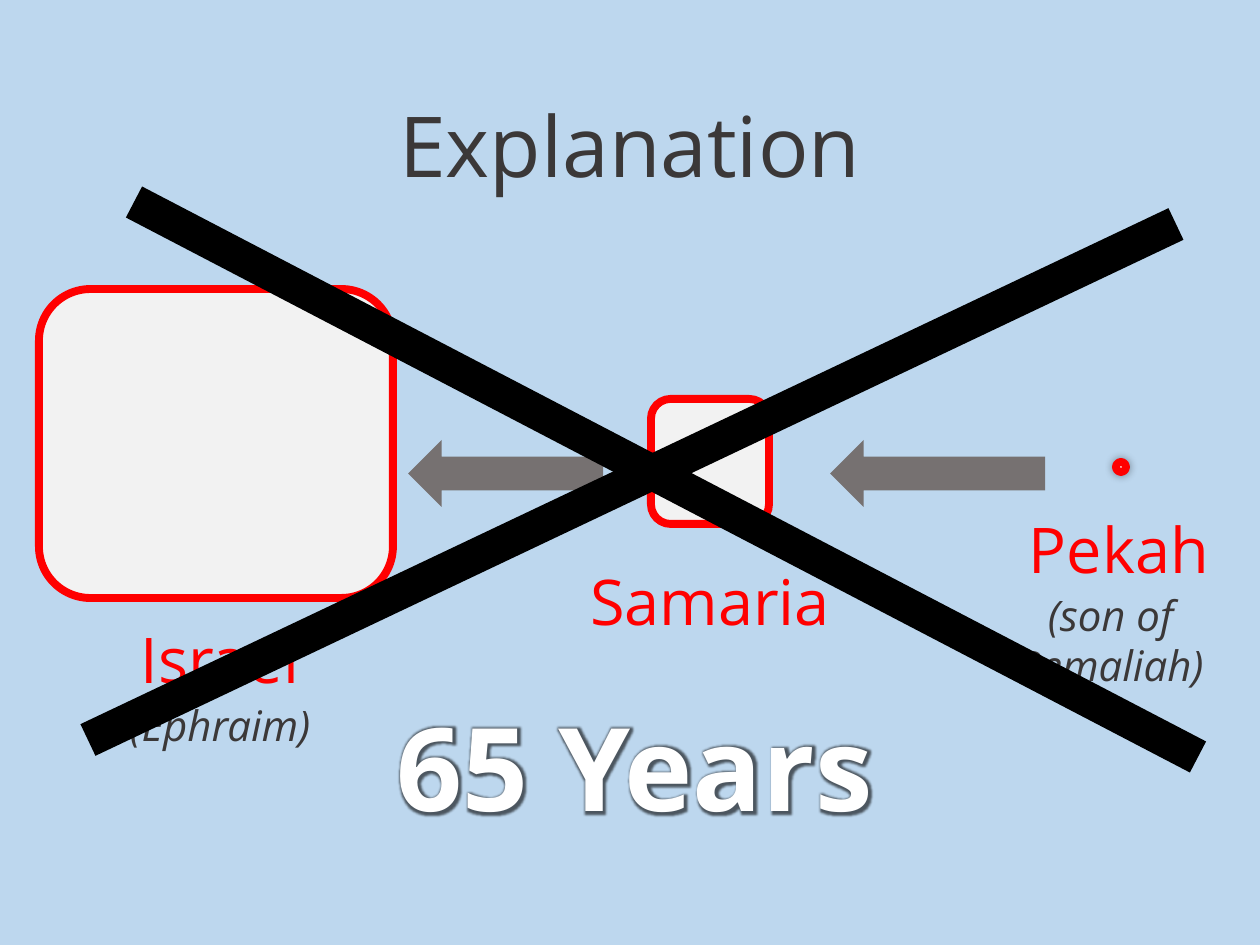
from dataclasses import dataclass
from typing import Optional

import lxml.etree
import pptx
import pptx.dml.color
import pptx.enum.shapes
import pptx.enum.text
import pptx.oxml
import pptx.oxml.ns
import pptx.util

RGB = pptx.dml.color.RGBColor
KIND = pptx.enum.shapes.MSO_SHAPE
SKY = RGB(0xBD, 0xD7, 0xEE)
DARK = RGB(0x3B, 0x38, 0x38)
RED = RGB(0xFF, 0x00, 0x00)
GRAY = RGB(0x76, 0x71, 0x71)
PALE = RGB(0xF2, 0xF2, 0xF2)
WHITE = RGB(0xFF, 0xFF, 0xFF)
BLACK = RGB(0x00, 0x00, 0x00)
FONT = "Open Sans"
SCALE = 914400 / 126
WIDE, HIGH = 1260, 945


@dataclass
class Box:
    x: int
    y: int
    w: int
    h: int


@dataclass
class Label:
    text: str
    box: Box
    size: int
    color: RGB
    bold: bool = False
    italic: bool = False


@dataclass
class Form:
    kind: KIND
    box: Box
    fill: RGB
    line: Optional[RGB] = None
    turn: int = 0


@dataclass
class Stroke:
    x1: int
    y1: int
    x2: int
    y2: int


LABELS = [
    Label("Israel", Box(43, 614, 354, 89), 36, RED),
    Label("Samaria", Box(485, 556, 450, 89), 36, RED),
    Label("Pekah", Box(942, 504, 354, 89), 36, RED),
    Label("(Ephraim)", Box(33, 693, 374, 63), 24, DARK, italic=True),
    Label("(son of Remaliah)", Box(956, 583, 309, 115), 24, DARK, italic=True),
]
YEARS = Label("65 Years", Box(5, 690, WIDE, 152), 66, WHITE, bold=True)
DOT = Form(KIND.OVAL, Box(1116, 462, 10, 10), WHITE, RED)
FORMS = [
    Form(KIND.RIGHT_ARROW, Box(830, 440, 215, 67), GRAY, turn=180),
    Form(KIND.RIGHT_ARROW, Box(408, 440, 195, 67), GRAY, turn=180),
    Form(KIND.ROUNDED_RECTANGLE, Box(39, 289, 354, 309), PALE, RED),
    Form(KIND.ROUNDED_RECTANGLE, Box(651, 399, 118, 125), PALE, RED),
]
CROSS = [Stroke(134, 202, 1198, 757), Stroke(88, 740, 1176, 224)]


def px(num: int) -> pptx.util.Emu:
    return pptx.util.Emu(round(num * SCALE))


def area(box: Box) -> tuple:
    return px(box.x), px(box.y), px(box.w), px(box.h)


def effect(inner: str = ""):
    space = pptx.oxml.ns.nsdecls("a")
    return pptx.oxml.parse_xml(f"<a:effectLst {space}>{inner}</a:effectLst>")


def shade(blur: int, alpha: int) -> str:
    return (
        f'<a:outerShdw blurRad="{pptx.util.Pt(blur)}" dist="0" dir="0" algn="ctr" rotWithShape="0">'
        f'<a:srgbClr val="{BLACK}"><a:alpha val="{alpha * 1000}"/></a:srgbClr></a:outerShdw>'
    )


def write(frame, text: str, *, size: int, color: RGB, bold: bool = False, italic: bool = False):
    frame.word_wrap = True
    frame.auto_size = pptx.enum.text.MSO_AUTO_SIZE.SHAPE_TO_FIT_TEXT
    frame.vertical_anchor = pptx.enum.text.MSO_ANCHOR.TOP
    para = frame.paragraphs[0]
    para.alignment = pptx.enum.text.PP_ALIGN.CENTER
    para.line_spacing = 1.0
    para.space_before = pptx.util.Pt(0)
    run = para.add_run()
    run.text = text
    font = run.font
    font.name, font.size = FONT, pptx.util.Pt(size)
    font.bold, font.italic = bold, italic
    font.color.rgb = color
    return run


def label(slide, item: Label):
    frame = slide.shapes.add_textbox(*area(item.box)).text_frame
    return write(frame, item.text, size=item.size, color=item.color,
                 bold=item.bold, italic=item.italic)


def form(slide, item: Form):
    shape = slide.shapes.add_shape(item.kind, *area(item.box))
    shape.shadow.inherit = False
    shape.rotation = item.turn
    shape.fill.solid()
    shape.fill.fore_color.rgb = item.fill
    if item.line is None:
        shape.line.fill.background()
    else:
        shape.line.color.rgb = item.line
        shape.line.width = pptx.util.Pt(4.5)
    return shape


def stroke(slide, item: Stroke) -> None:
    line = slide.shapes.add_connector(
        pptx.enum.shapes.MSO_CONNECTOR.STRAIGHT,
        px(item.x1), px(item.y1), px(item.x2), px(item.y2))
    line.line.color.rgb = BLACK
    line.line.width = pptx.util.Pt(20)
    line.element.spPr.append(effect())


def main() -> None:
    deck = pptx.Presentation()
    deck.slide_width, deck.slide_height = px(WIDE), px(HIGH)
    slide = deck.slides.add_slide(deck.slide_layouts[5])
    title = slide.shapes.title
    title.left, title.top, title.width, title.height = area(Box(0, 87, WIDE, 115))
    write(title.text_frame, "Explanation", size=48, color=DARK)
    back = form(slide, Form(KIND.RECTANGLE, Box(0, 0, WIDE, HIGH), SKY))
    title.element.addprevious(back.element)

    for item in LABELS:
        label(slide, item)
    dot = form(slide, DOT)
    dot.element.spPr.find(pptx.oxml.ns.qn("a:effectLst")).append(
        lxml.etree.fromstring(lxml.etree.tostring(effect(shade(5, 40))))[0])
    for item in FORMS:
        form(slide, item)

    run = label(slide, YEARS)
    fill = run.font.fill
    fill.solid()
    fill.fore_color.rgb = WHITE
    glow = (f'<a:glow rad="{pptx.util.Pt(5)}"><a:srgbClr val="{BLACK}">'
            '<a:alpha val="60000"/></a:srgbClr></a:glow>')
    props = run.font.fill
    node = run.text and run._r.get_or_add_rPr()
    node.find(pptx.oxml.ns.qn("a:solidFill")).addnext(effect(glow + shade(5, 40)))

    for item in CROSS:
        stroke(slide, item)
    deck.save("out.pptx")


if __name__ == "__main__":
    main()
